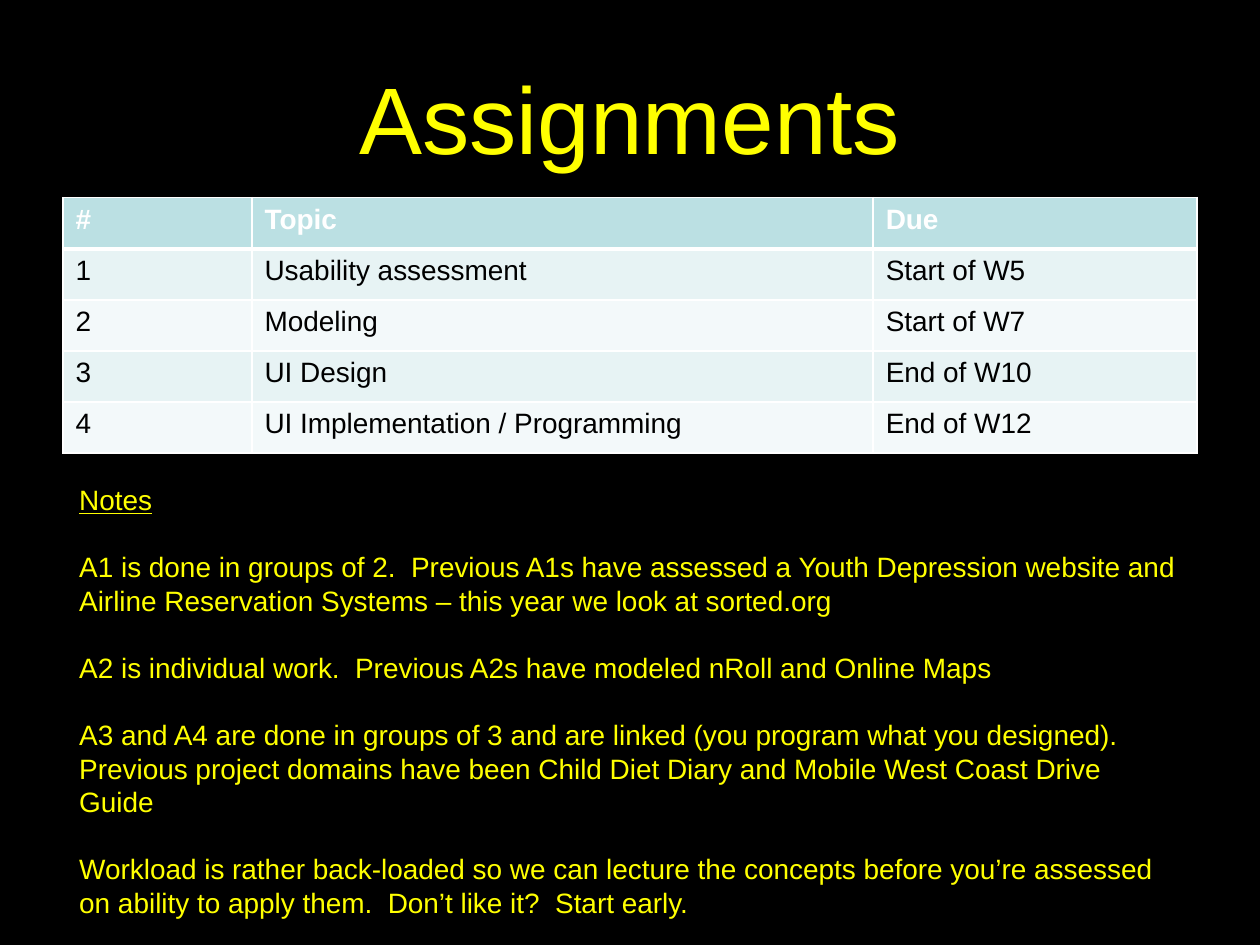
from typing import NamedTuple

from lxml.etree import SubElement
from pptx import Presentation
from pptx.dml.color import RGBColor
from pptx.enum.text import MSO_ANCHOR, PP_ALIGN
from pptx.oxml.ns import qn
from pptx.util import Pt

BLACK, WHITE, YELLOW = "000000", "FFFFFF", "FFFF00"
HEAD, ODD, EVEN = "BBE0E3", "E7F3F4", "F3F9FA"
SIZE = 16
LINE = Pt(19.2)


class Box(NamedTuple):
    left: float
    top: float
    width: float
    height: float


class Task(NamedTuple):
    num: str
    topic: str
    due: str


TASKS = [
    Task("#", "Topic", "Due"),
    Task("1", "Usability assessment", "Start of W5"),
    Task("2", "Modeling", "Start of W7"),
    Task("3", "UI Design", "End of W10"),
    Task("4", "UI Implementation / Programming", "End of W12"),
]
WIDTHS = [108, 355, 185]
ROW = 29.2

NOTES = [
    "Notes",
    "A1 is done in groups of 2.  Previous A1s have assessed a Youth Depression website "
    "and Airline Reservation Systems – this year we look at sorted.org",
    "A2 is individual work.  Previous A2s have modeled nRoll and Online Maps",
    "A3 and A4 are done in groups of 3 and are linked (you program what you designed). "
    "Previous project domains have been Child Diet Diary and Mobile West Coast Drive Guide",
    "Workload is rather back-loaded so we can lecture the concepts before you’re assessed "
    "on ability to apply them.  Don’t like it?  Start early.",
]


def paint(fill, color: str) -> None:
    fill.solid()
    fill.fore_color.rgb = RGBColor.from_string(color)


def add_run(para, text: str, size: float, color: str, bold=False, under=False) -> None:
    run = para.add_run()
    run.text = text
    font = run.font
    font.name, font.size = "Arial", Pt(size)
    font.bold, font.underline = bold, under
    paint(font.fill, color)


def add_box(slide, box: Box):
    """Add a wrapping text box and return its frame."""
    frame = slide.shapes.add_textbox(*map(Pt, box)).text_frame
    frame.word_wrap = True
    return frame


def add_edge(cell, side: str, width: float) -> None:
    props = cell._tc.get_or_add_tcPr()
    line = SubElement(props, qn(f"a:ln{side}"), w=str(Pt(width)))
    fill = SubElement(line, qn("a:solidFill"))
    SubElement(fill, qn("a:srgbClr"), val=WHITE)


def add_title(slide, text: str) -> None:
    frame = add_box(slide, Box(36, 21.6, 648, 90))
    frame.vertical_anchor = MSO_ANCHOR.MIDDLE
    para = frame.paragraphs[0]
    para.alignment = PP_ALIGN.CENTER
    add_run(para, text, 54, YELLOW)


def add_tasks(slide, tasks: list[Task]) -> None:
    box = Box(36, 113, sum(WIDTHS), ROW * len(tasks))
    table = slide.shapes.add_table(len(tasks), len(WIDTHS), *map(Pt, box)).table
    for col, width in zip(table.columns, WIDTHS):
        col.width = Pt(width)
    for i, task in enumerate(tasks):
        table.rows[i].height = Pt(ROW)
        head = i == 0
        shade = HEAD if head else ODD if i % 2 else EVEN
        edges = {"L": 1, "R": 1, "T": 3 if i == 1 else 1, "B": 3 if head else 1}
        for j, text in enumerate(task):
            cell = table.cell(i, j)
            # Edges must come before the fill in the cell's XML.
            for side, width in edges.items():
                add_edge(cell, side, width)
            paint(cell.fill, shade)
            add_run(cell.text_frame.paragraphs[0], text, SIZE,
                    WHITE if head else BLACK, bold=head)


def add_notes(slide, notes: list[str]) -> None:
    frame = add_box(slide, Box(38.2, 272.2, 640.8, 259.2))
    for i, text in enumerate(notes):
        para = frame.add_paragraph() if i else frame.paragraphs[0]
        para.line_spacing = LINE
        if i:
            para.space_before = LINE
        add_run(para, text, SIZE, YELLOW, under=i == 0)


def main() -> None:
    deck = Presentation()
    deck.slide_width, deck.slide_height = Pt(720), Pt(540)
    slide = deck.slides.add_slide(deck.slide_layouts[6])
    paint(slide.background.fill, BLACK)
    add_title(slide, "Assignments")
    add_tasks(slide, TASKS)
    add_notes(slide, NOTES)
    deck.save("out.pptx")


if __name__ == "__main__":
    main()
